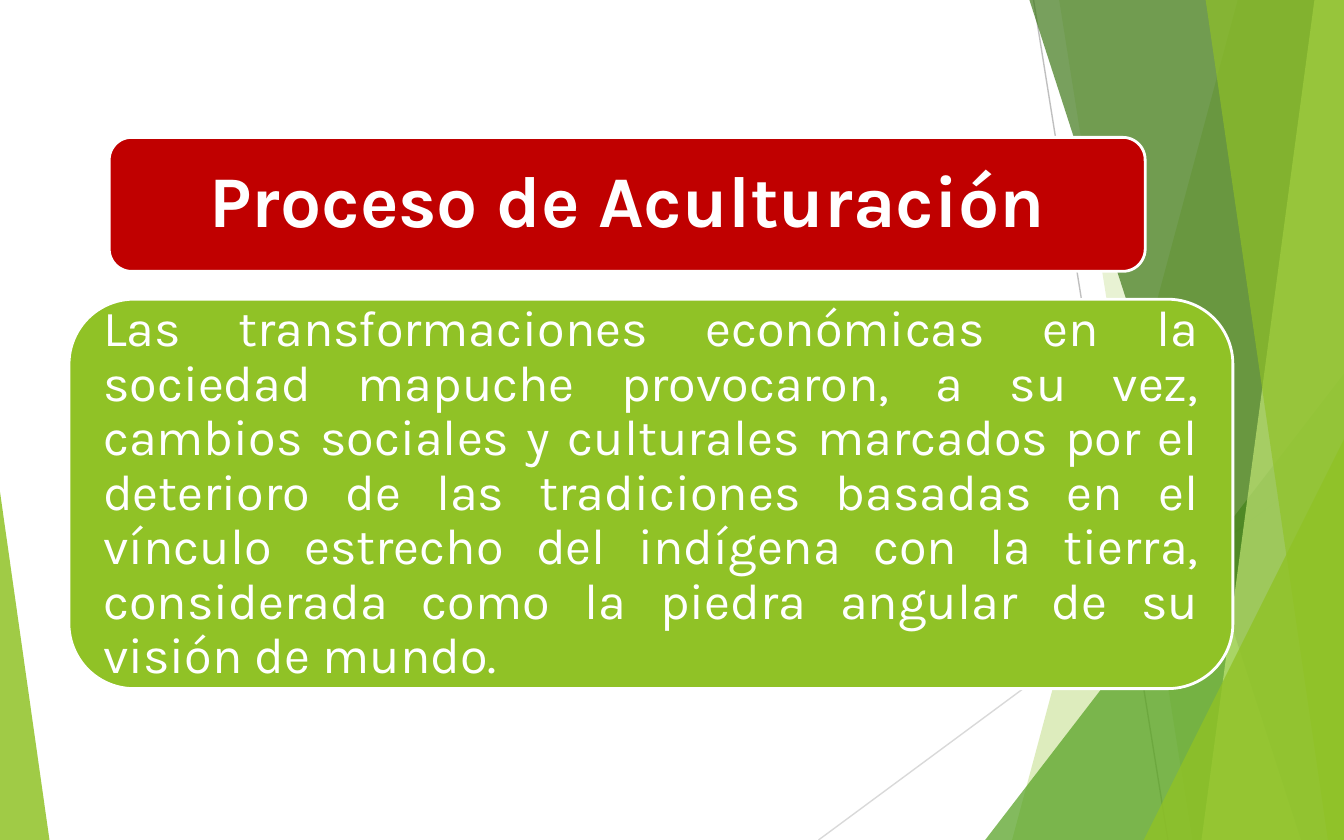
import lxml.etree
import pptx
import pptx.dml.color
import pptx.enum.shapes
import pptx.enum.text
import pptx.oxml.ns
import pptx.util

Pt = pptx.util.Pt
RGBColor = pptx.dml.color.RGBColor
SHAPES = pptx.enum.shapes.MSO_SHAPE
ALIGN = pptx.enum.text.PP_ALIGN
qn = pptx.oxml.ns.qn

WHITE = RGBColor(0xFF, 0xFF, 0xFF)
RED = RGBColor(0xC0, 0x00, 0x00)
LIME = RGBColor(0x90, 0xC2, 0x26)
PALE_LIME = RGBColor(0xC0, 0xE4, 0x74)
GREEN = RGBColor(0x54, 0xA0, 0x21)
DARK_GREEN = RGBColor(0x3F, 0x78, 0x19)
GREY = RGBColor(0xBF, 0xBF, 0xBF)
LIGHT_GREY = RGBColor(0xD9, 0xD9, 0xD9)

WIDTH, HEIGHT = 720, 450
TITLE = "Proceso de Aculturación"
EXPLANATION = (
    "Las transformaciones económicas en la sociedad mapuche provocaron, a su vez, "
    "cambios sociales y culturales marcados por el deterioro de las tradiciones basadas "
    "en el vínculo estrecho del indígena con la tierra, considerada como la piedra "
    "angular de su visión de mundo."
)


def tint(shape, color, opacity):
    """Give a borderless shape a translucent fill."""
    shape.shadow.inherit = False
    shape.line.fill.background()
    shape.fill.solid()
    shape.fill.fore_color.rgb = color
    color_element = shape.fill._xPr.find(qn("a:solidFill"))[0]
    lxml.etree.SubElement(color_element, qn("a:alpha")).set("val", str(opacity * 1000))


def add_ray(slide, start, end, color):
    """Draw a thin line between two points."""
    ray = slide.shapes.add_connector(
        pptx.enum.shapes.MSO_CONNECTOR.STRAIGHT, *map(Pt, start + end)
    )
    ray.line.color.rgb = color
    ray.line.width = Pt(0.75)
    lxml.etree.SubElement(ray._element.spPr, qn("a:effectLst"))


def add_facet(slide, box, top_inset, bottom_inset, color, opacity):
    """Fill from a slanted left edge to the right edge of the box."""
    left, top, width, height = box
    right, bottom = left + width, top + height
    builder = slide.shapes.build_freeform(Pt(left + top_inset), Pt(top))
    corners = [(right, top), (right, bottom), (left + bottom_inset, bottom)]
    builder.add_line_segments([(Pt(x), Pt(y)) for x, y in corners], close=True)
    tint(builder.convert_to_shape(), color, opacity)


def add_corner(slide, box, apex, color, opacity):
    """Fill a triangle whose apex lies at a share of the box width."""
    corner = slide.shapes.add_shape(SHAPES.ISOSCELES_TRIANGLE, *map(Pt, box))
    corner.adjustments[0] = apex
    tint(corner, color, opacity)


def add_right_ribbons(slide, box):
    """Layer the rays, facets and corners at the right of the slide."""
    left, top, width, height = box
    right, bottom = left + width, top + height

    def corner_box(corner_width, corner_height):
        """Place a corner at the bottom right of the box."""
        return right - corner_width, bottom - corner_height, corner_width, corner_height

    add_ray(slide, (left + 115.2, top), (left + 187.2, bottom), GREY)
    add_ray(slide, (right, top + 241.9), (left, bottom), LIGHT_GREY)
    add_facet(slide, box, 224.6, 103.7, LIME, 30)
    add_facet(slide, box, 128.9, 200.2, LIME, 20)
    add_corner(slide, corner_box(192.2, 249.8), 1, GREEN, 72)
    add_facet(slide, box, 113, 258.5, DARK_GREEN, 70)
    add_facet(slide, box, 265.7, 205.2, PALE_LIME, 70)
    add_facet(slide, box, 207.4, 272.9, LIME, 65)
    add_corner(slide, corner_box(107.3, 214.6), 1, LIME, 80)


def add_panel(slide, box, text, color, size, align, inset, bold=False):
    """Place a rounded panel with one paragraph."""
    panel = slide.shapes.add_shape(SHAPES.ROUNDED_RECTANGLE, *map(Pt, box))
    panel.shadow.inherit = False
    panel.fill.solid()
    panel.fill.fore_color.rgb = color
    panel.line.color.rgb = WHITE
    panel.line.width = Pt(1.5)
    frame = panel.text_frame
    frame.word_wrap = True
    frame.vertical_anchor = pptx.enum.text.MSO_ANCHOR.MIDDLE
    frame.margin_left = frame.margin_right = Pt(inset)
    frame.margin_top = frame.margin_bottom = Pt(inset)
    paragraph = frame.paragraphs[0]
    paragraph.text = text
    paragraph.alignment = align
    paragraph.line_spacing = 0.9
    paragraph.font.name = "Karla"
    paragraph.font.size = Pt(size)
    paragraph.font.bold = bold
    paragraph.font.color.rgb = WHITE


def main():
    """Build and save the slide."""
    deck = pptx.Presentation()
    deck.slide_width, deck.slide_height = Pt(WIDTH), Pt(HEIGHT)
    slide = deck.slides.add_slide(deck.slide_layouts[6])
    add_right_ribbons(slide, (438.5, 0, WIDTH - 438.5, HEIGHT))
    add_corner(slide, (0, 263.5, 26.5, HEIGHT - 263.5), 0, LIME, 85)
    add_panel(slide, (58.5, 73.6, 555, 71.8), TITLE, RED, 39, ALIGN.CENTER, 11.7, bold=True)
    add_panel(slide, (37, 160.3, 623.5, 208.6), EXPLANATION, LIME, 27, ALIGN.JUSTIFY, 8.1)
    deck.save("out.pptx")


if __name__ == "__main__":
    main()
